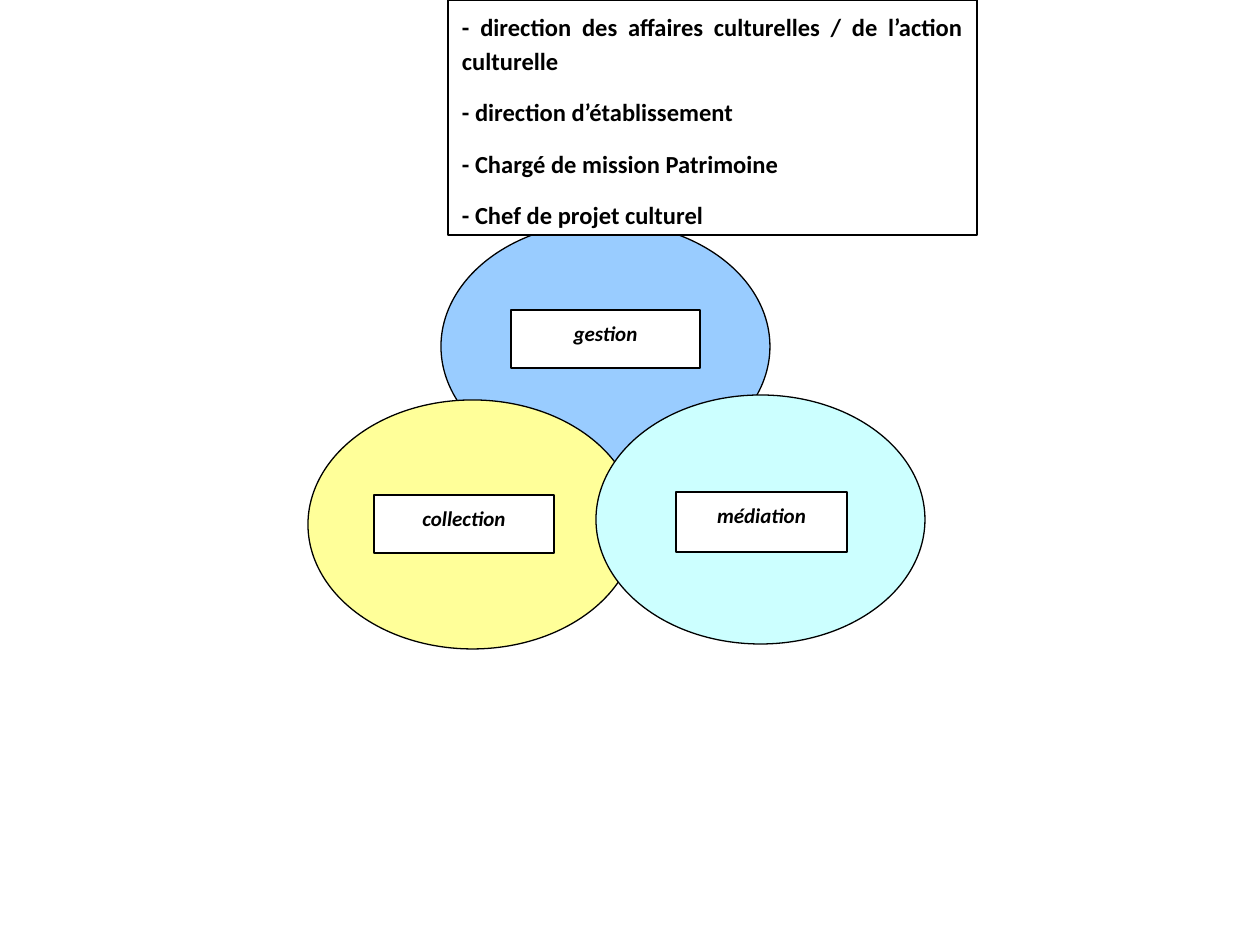
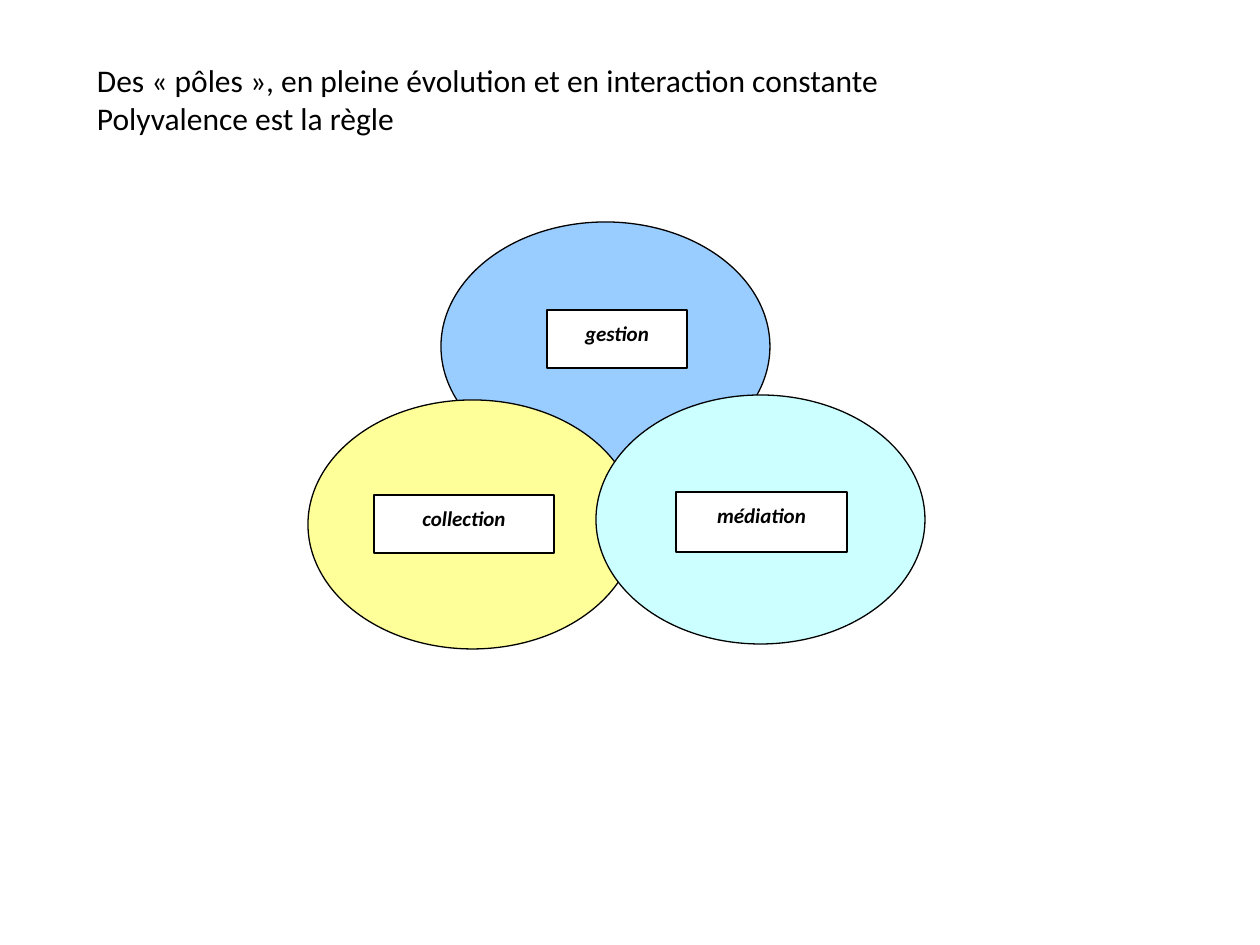
from lxml import etree
from pptx import Presentation
from pptx.dml.color import RGBColor
from pptx.enum.shapes import MSO_SHAPE
from pptx.enum.text import MSO_ANCHOR, MSO_AUTO_SIZE, PP_ALIGN
from pptx.oxml.ns import qn
from pptx.util import Pt

OVAL, RECTANGLE = MSO_SHAPE.OVAL, MSO_SHAPE.RECTANGLE
LEFT, CENTER, JUSTIFY = PP_ALIGN.LEFT, PP_ALIGN.CENTER, PP_ALIGN.JUSTIFY
TOP, FIXED = MSO_ANCHOR.TOP, MSO_AUTO_SIZE.NONE
PX = 914400 / 126

COLOURS = {
    "ink": "000000",
    "paper": "FFFFFF",
    "gestion": "99CCFF",
    "collection": "FFFF99",
    "médiation": "CCFFFF",
}
SPACED = {"line_spacing": 1.15, "space_before": Pt(10)}
STYLES = {
    "label": ({"size": Pt(12), "bold": True, "italic": True}, {"alignment": CENTER, **SPACED}),
    "jobs": ({"size": Pt(14), "bold": True}, {"alignment": JUSTIFY, **SPACED}),
    "title": ({"size": Pt(18), "bold": False}, {"alignment": LEFT}),
}
OVAL_SIZE = (329, 249)
OVALS = {"gestion": (441, 222), "collection": (308, 400), "médiation": (596, 395)}
LABELS = {"médiation": (676, 492, 171, 60), "collection": (374, 495, 180, 58)}
GESTION_LABELS = [(511, 310, 189, 58), (547, 310, 140, 58)]
JOBS = [
    "- direction des affaires culturelles / de l’action culturelle",
    "- direction d’établissement",
    "- Chargé de mission Patrimoine",
    "- Chef de projet culturel",
]
TITLE = [
    "Des « pôles », en pleine évolution et en interaction constante",
    "Polyvalence est la règle",
]


def paint(shape, fill):
    shape.fill.solid()
    shape.fill.fore_color.rgb = RGBColor.from_string(COLOURS[fill])
    shape.line.color.rgb = RGBColor.from_string(COLOURS["ink"])
    shape.line.width = Pt(0.75)


def write(shape, lines, style, side, top):
    frame = shape.text_frame
    frame.text = "\n".join(lines)
    frame_format = {
        "word_wrap": True, "auto_size": FIXED, "vertical_anchor": TOP,
        "margin_left": round(side * PX), "margin_right": round(side * PX),
        "margin_top": round(top * PX), "margin_bottom": round(6 * PX),
    }
    for name, value in frame_format.items():
        setattr(frame, name, value)
    font_format, para_format = STYLES[style]
    for para in frame.paragraphs:
        for name, value in para_format.items():
            setattr(para, name, value)
        for span in para.runs:
            span.font.name = "Calibri"
            span.font.color.rgb = RGBColor.from_string(COLOURS["ink"])
            for name, value in font_format.items():
                setattr(span.font, name, value)


deck = Presentation()
deck.slide_width, deck.slide_height = round(1260 * PX), round(945 * PX)
pages = [deck.slides.add_slide(deck.slide_layouts[number]) for number in (1, 5)]

for page, gestion_label in zip(pages, GESTION_LABELS):
    for pole, corner in OVALS.items():
        oval = page.shapes.add_shape(OVAL, *[round(n * PX) for n in corner + OVAL_SIZE])
        oval.shadow.inherit = False
        paint(oval, pole)
    for pole, place in {"gestion": gestion_label, **LABELS}.items():
        label = page.shapes.add_shape(RECTANGLE, *[round(n * PX) for n in place])
        label.shadow.inherit = False
        paint(label, "paper")
        write(label, [pole], "label", 14, 7)

jobs_page, poles_page = pages
unused_title = jobs_page.shapes.title.element
unused_title.getparent().remove(unused_title)
jobs = jobs_page.placeholders[1]
title = poles_page.shapes.title
for box, place in ((jobs, (448, 0, 529, 235)), (title, (91, 55, 1138, 86))):
    for side, length in zip(("left", "top", "width", "height"), place):
        setattr(box, side, round(length * PX))

paint(jobs, "paper")
write(jobs, JOBS, "jobs", 14, 8)
for para in jobs.text_frame.paragraphs:
    properties = para._p.get_or_add_pPr()
    properties.set("marL", "0")
    properties.set("indent", "0")
    etree.SubElement(properties, qn("a:buNone"))
jobs_page.shapes.element.append(jobs.element)

write(title, TITLE, "title", 6, 6)

deck.save("out.pptx")
